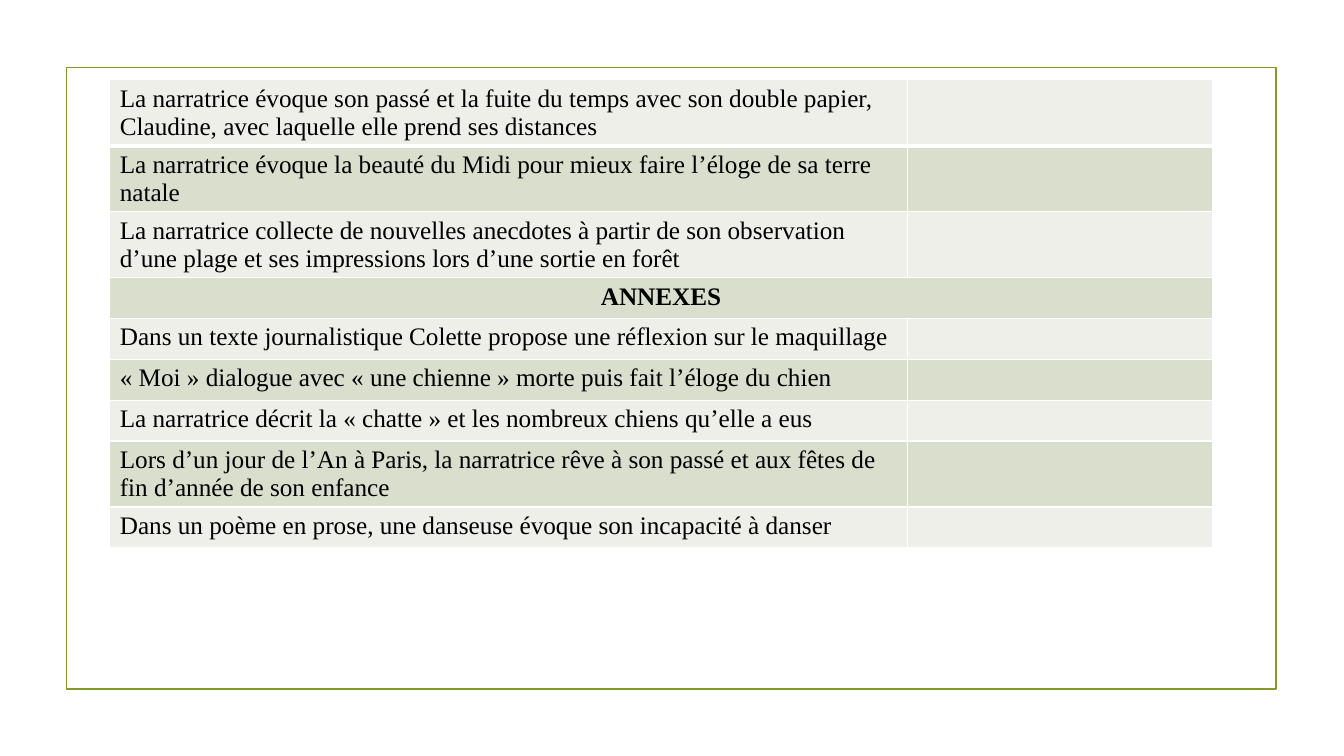
"""Build a slide with a framed two-column table about Colette's texts."""
from lxml.etree import SubElement
from pptx import Presentation
from pptx.dml.color import RGBColor
from pptx.enum.shapes import MSO_SHAPE
from pptx.enum.text import PP_ALIGN
from pptx.oxml.ns import qn
from pptx.util import Pt

OLIVE = RGBColor(0x83, 0x99, 0x2A)
PALE = RGBColor(0xED, 0xEF, 0xE8)
SAGE = RGBColor(0xD9, 0xDE, 0xCD)
WHITE = RGBColor(0xFF, 0xFF, 0xFF)
BLACK = RGBColor(0, 0, 0)

HEADING = "ANNEXES"
ROWS = [
    "La narratrice évoque son passé et la fuite du temps avec son double papier, Claudine, avec laquelle elle prend ses distances",
    "La narratrice évoque la beauté du Midi pour mieux faire l’éloge de sa terre natale",
    "La narratrice collecte de nouvelles anecdotes à partir de son observation d’une plage et ses impressions lors d’une sortie en forêt",
    HEADING,
    "Dans un texte journalistique Colette propose une réflexion sur le maquillage",
    "« Moi » dialogue avec « une chienne » morte puis fait l’éloge du chien",
    "La narratrice décrit la « chatte » et les nombreux chiens qu’elle a eus",
    "Lors d’un jour de l’An à Paris, la narratrice rêve à son passé et aux fêtes de fin d’année de son enfance",
    "Dans un poème en prose, une danseuse évoque son incapacité à danser",
]


def write_text(cell, text, size=18, bold=False, align=PP_ALIGN.LEFT):
    paragraph = cell.text_frame.paragraphs[0]
    paragraph.alignment = align
    run = paragraph.add_run()
    run.text = text
    run.font.name = "Times New Roman"
    run.font.size = Pt(size)
    run.font.bold = bold
    run.font.color.rgb = BLACK


def set_borders(cell, top=1, bottom=1):
    properties = cell._tc.get_or_add_tcPr()
    for side, width in (("L", 1), ("R", 1), ("T", top), ("B", bottom)):
        line = SubElement(properties, qn(f"a:ln{side}"), w=str(Pt(width)))
        fill = SubElement(line, qn("a:solidFill"))
        SubElement(fill, qn("a:srgbClr"), val=str(WHITE))


presentation = Presentation()
presentation.slide_width = Pt(960)
presentation.slide_height = Pt(540)
slide = presentation.slides.add_slide(presentation.slide_layouts[6])

frame = slide.shapes.add_shape(MSO_SHAPE.RECTANGLE, Pt(47.6), Pt(48.2), Pt(864), Pt(444))
frame.shadow.inherit = False
frame.fill.background()
frame.line.color.rgb = OLIVE
frame.line.width = Pt(1.25)

row_height = 29.2
table = slide.shapes.add_table(
    len(ROWS), 2, Pt(78.4), Pt(57), Pt(787.6), Pt(row_height * len(ROWS))
).table
table.first_row = False
table.horz_banding = False
table.columns[0].width = Pt(570)
table.columns[1].width = Pt(217.6)

for index, text in enumerate(ROWS):
    table.rows[index].height = Pt(row_height)
    for cell in table.rows[index].cells:
        set_borders(cell, top=3 if index == 1 else 1, bottom=3 if index == 0 else 1)
        cell.fill.solid()
        cell.fill.fore_color.rgb = SAGE if index % 2 else PALE
    first_cell = table.cell(index, 0)
    if text == HEADING:
        first_cell.merge(table.cell(index, 1))
        write_text(first_cell, text, bold=True, align=PP_ALIGN.CENTER)
    else:
        write_text(first_cell, text)

presentation.save("out.pptx")
